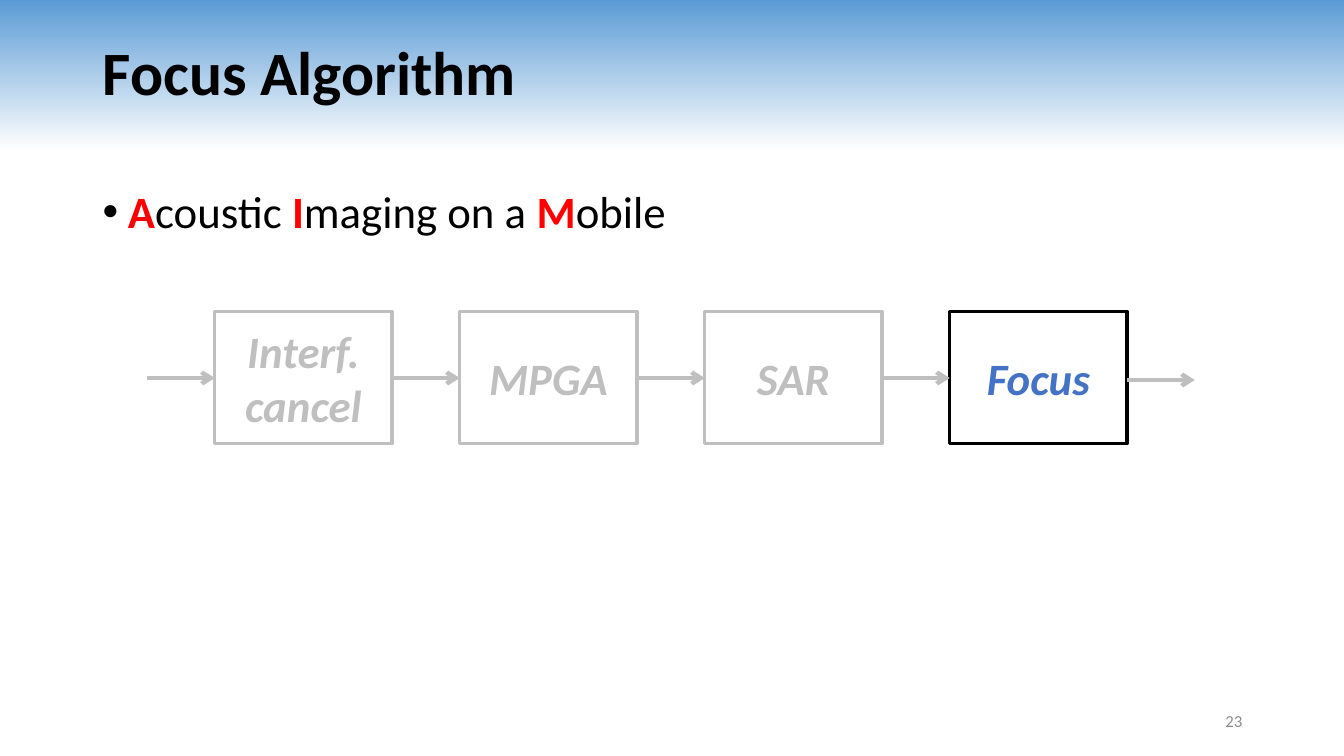
from copy import deepcopy
from dataclasses import dataclass

from lxml.etree import SubElement
from pptx import Presentation
from pptx.dml.color import RGBColor
from pptx.enum.shapes import MSO_CONNECTOR as Connector, MSO_SHAPE as Shape
from pptx.enum.text import MSO_ANCHOR as Anchor, PP_ALIGN as Align
from pptx.oxml.ns import qn
from pptx.util import Inches, Pt

TITLE = "Focus Algorithm"
ACRONYM = [("A", "coustic "), ("I", "maging on a "), ("M", "obile")]
STAGES = ["Interf. cancel", "MPGA", "SAR", "Focus"]
ACTIVE_STAGE = "Focus"
PAGE_NUMBER = "23"


@dataclass(frozen=True)
class Theme:
    font: str = "Calibri"
    text: str = "000000"
    initial: str = "FF0000"
    muted: str = "BFBFBF"
    active: str = "4472C4"
    page: str = "8C8C8C"
    paper: str = "FFFFFF"
    sky: str = "5B9BD5"
    title_size: int = 44
    body_size: int = 32
    page_size: int = 12
    box_line: float = 2.5
    arrow_line: float = 3


THEME = Theme()
BOX_LEFT, BOX_TOP, BOX_WIDTH, BOX_HEIGHT = 2.13, 3.09, 1.76, 1.31
STAGE_PITCH = 2.43
ARROW_LENGTH = STAGE_PITCH - BOX_WIDTH
ARROW_Y, OUTPUT_Y = 3.75, 3.77


def color(value):
    return RGBColor.from_string(value)


def style(font, size, value, bold=False, italic=False):
    font.name, font.size = THEME.font, Pt(size)
    font.color.rgb = color(value)
    font.bold, font.italic = bold, italic


def paint_background(slide):
    fill = slide.background.fill
    fill.gradient()
    fill.gradient_angle = 90
    for stop, position, value in zip(fill.gradient_stops, (0.8, 1), (THEME.paper, THEME.sky)):
        stop.position = position
        stop.color.rgb = color(value)
    stops = next(slide.element.iter(qn("a:gsLst")))
    base = deepcopy(stops[0])
    base.set("pos", "0")
    stops.insert(0, base)


def add_text(slide, left, top, width, height, anchor):
    box = slide.shapes.add_textbox(Inches(left), Inches(top), Inches(width), Inches(height))
    frame = box.text_frame
    frame.word_wrap = True
    frame.vertical_anchor = anchor
    return frame.paragraphs[0]


def add_bullet(paragraph):
    properties = paragraph._p.get_or_add_pPr()
    properties.set("marL", str(Inches(0.25)))
    properties.set("indent", str(Inches(-0.25)))
    bullet_color = SubElement(properties, qn("a:buClr"))
    SubElement(bullet_color, qn("a:srgbClr")).set("val", THEME.text)
    SubElement(properties, qn("a:buFont")).set("typeface", "Arial")
    SubElement(properties, qn("a:buChar")).set("char", "•")


def add_stage(slide, name, left):
    active = name == ACTIVE_STAGE
    box = slide.shapes.add_shape(
        Shape.RECTANGLE, Inches(left), Inches(BOX_TOP), Inches(BOX_WIDTH), Inches(BOX_HEIGHT))
    box.shadow.inherit = False
    box.fill.background()
    box.line.color.rgb = color(THEME.text if active else THEME.muted)
    box.line.width = Pt(THEME.box_line)
    box.text_frame.word_wrap = True
    box.text_frame.vertical_anchor = Anchor.MIDDLE
    paragraph = box.text_frame.paragraphs[0]
    paragraph.text = name
    paragraph.alignment = Align.CENTER
    style(paragraph.font, THEME.body_size, THEME.active if active else THEME.muted, True, True)


def add_arrow(slide, left, y):
    arrow = slide.shapes.add_connector(
        Connector.STRAIGHT, Inches(left), Inches(y), Inches(left + ARROW_LENGTH), Inches(y))
    arrow.line.color.rgb = color(THEME.muted)
    arrow.line.width = Pt(THEME.arrow_line)
    SubElement(arrow.line._get_or_add_ln(), qn("a:tailEnd")).set("type", "arrow")
    SubElement(arrow._element.spPr, qn("a:effectLst"))


def main():
    presentation = Presentation()
    presentation.slide_width, presentation.slide_height = Inches(13.33), Inches(7.5)
    slide = presentation.slides.add_slide(presentation.slide_layouts[6])
    paint_background(slide)

    title = add_text(slide, 0.92, 0.02, 11.5, 1.45, Anchor.MIDDLE)
    title.text = TITLE
    title.line_spacing = 0.9
    style(title.font, THEME.title_size, THEME.text, bold=True)

    body = add_text(slide, 0.92, 1.83, 11.5, 4.86, Anchor.TOP)
    body.line_spacing = 0.9
    body.space_before = Pt(10)
    add_bullet(body)
    for initial, rest in ACRONYM:
        for text, value, bold in ((initial, THEME.initial, True), (rest, THEME.text, False)):
            run = body.add_run()
            run.text = text
            style(run.font, THEME.body_size, value, bold)

    page = add_text(slide, 9.42, 6.95, 3, 0.4, Anchor.MIDDLE)
    page.text = PAGE_NUMBER
    page.alignment = Align.RIGHT
    style(page.font, THEME.page_size, THEME.page)

    for index, name in enumerate(STAGES):
        left = BOX_LEFT + index * STAGE_PITCH
        add_stage(slide, name, left)
        add_arrow(slide, left - ARROW_LENGTH, ARROW_Y)
    add_arrow(slide, left + BOX_WIDTH, OUTPUT_Y)

    presentation.save("out.pptx")


if __name__ == "__main__":
    main()
